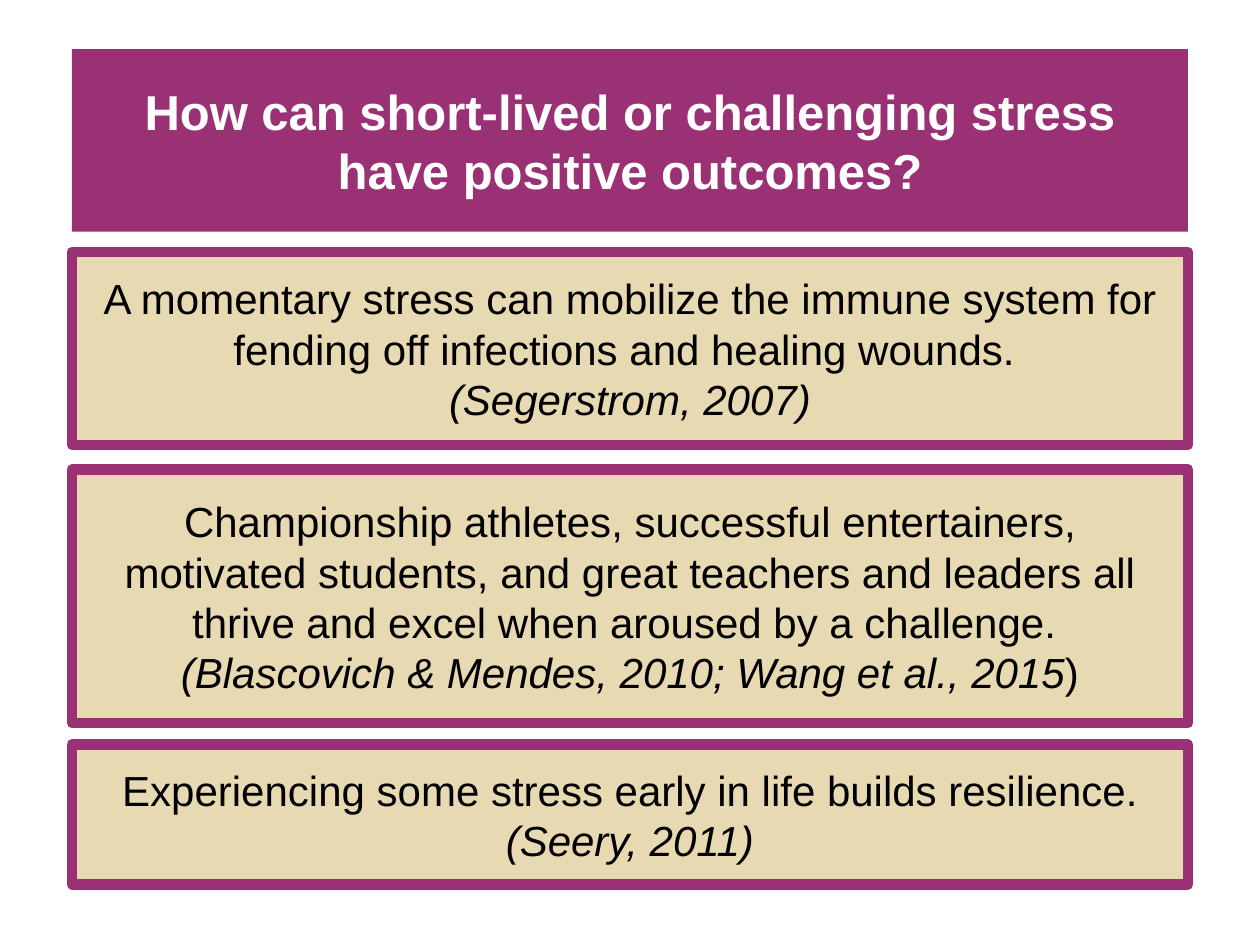
from dataclasses import dataclass

from pptx import Presentation
from pptx.dml.color import RGBColor
from pptx.enum.shapes import MSO_SHAPE
from pptx.enum.text import MSO_ANCHOR, PP_ALIGN
from pptx.util import Cm, Pt

RECT = MSO_SHAPE.RECTANGLE
MIDDLE = MSO_ANCHOR.MIDDLE
CENTER = PP_ALIGN.CENTER

COLORS = {"plum": "9B3175", "sand": "E7D9B1", "white": "FFFFFF", "black": "000000"}
FONT = "Arial"
LEFT, WIDTH = 1.45, 22.5  # shared column, cm


@dataclass
class Run:
    text: str
    italic: bool = False


@dataclass
class Panel:
    top: float
    height: float
    paragraphs: list[list[Run]]


TITLE = Panel(0.99, 3.68, [
    [Run("How can short-lived or challenging stress have positive outcomes?")],
])
FINDINGS = [
    Panel(5.08, 3.89, [
        [Run("A momentary stress can mobilize the immune system for "
             "fending off infections and healing wounds. ")],
        [Run("(Segerstrom, 2007)", italic=True)],
    ]),
    Panel(9.47, 5.11, [
        [Run("Championship athletes, successful entertainers,")],
        [Run("motivated students, and great teachers and leaders all "
             "thrive and excel when aroused by a challenge. ")],
        [Run("(Blascovich & Mendes, 2010; Wang et al., 2015", italic=True), Run(")")],
    ]),
    Panel(15.01, 2.82, [
        [Run("Experiencing some stress early in life builds resilience. "),
         Run("(Seery, 2011)", italic=True)],
    ]),
]


def rgb(name: str) -> RGBColor:
    return RGBColor.from_string(COLORS[name])


def add_text(p, text: str, *, size: int, color: str,
             bold: bool = False, italic: bool = False) -> None:
    r = p.add_run()
    r.text = text
    r.font.name = FONT
    r.font.size = Pt(size)
    r.font.bold = bold
    r.font.italic = italic
    r.font.color.rgb = rgb(color)


def add_panel(s, panel: Panel, *, fill: str, color: str, size: int,
              bold: bool = False, border: str | None = None) -> None:
    sp = s.shapes.add_shape(RECT, Cm(LEFT), Cm(panel.top), Cm(WIDTH), Cm(panel.height))
    sp.shadow.inherit = False
    sp.fill.solid()
    sp.fill.fore_color.rgb = rgb(fill)
    if border:
        sp.line.color.rgb = rgb(border)
        sp.line.width = Pt(6)
    else:
        sp.line.fill.background()

    tf = sp.text_frame
    tf.word_wrap = True
    tf.vertical_anchor = MIDDLE
    for i, runs in enumerate(panel.paragraphs):
        p = tf.add_paragraph() if i else tf.paragraphs[0]
        p.alignment = CENTER
        for run in runs:
            add_text(p, run.text, size=size, color=color, bold=bold, italic=run.italic)


def main() -> None:
    prs = Presentation()
    prs.slide_width, prs.slide_height = Cm(25.4), Cm(19.05)
    s = prs.slides.add_slide(prs.slide_layouts[6])

    # Heading band
    add_panel(s, TITLE, fill="plum", color="white", size=28, bold=True)

    # Research findings
    for panel in FINDINGS:
        add_panel(s, panel, fill="sand", color="black", size=24, border="plum")

    prs.save("out.pptx")


if __name__ == "__main__":
    main()
